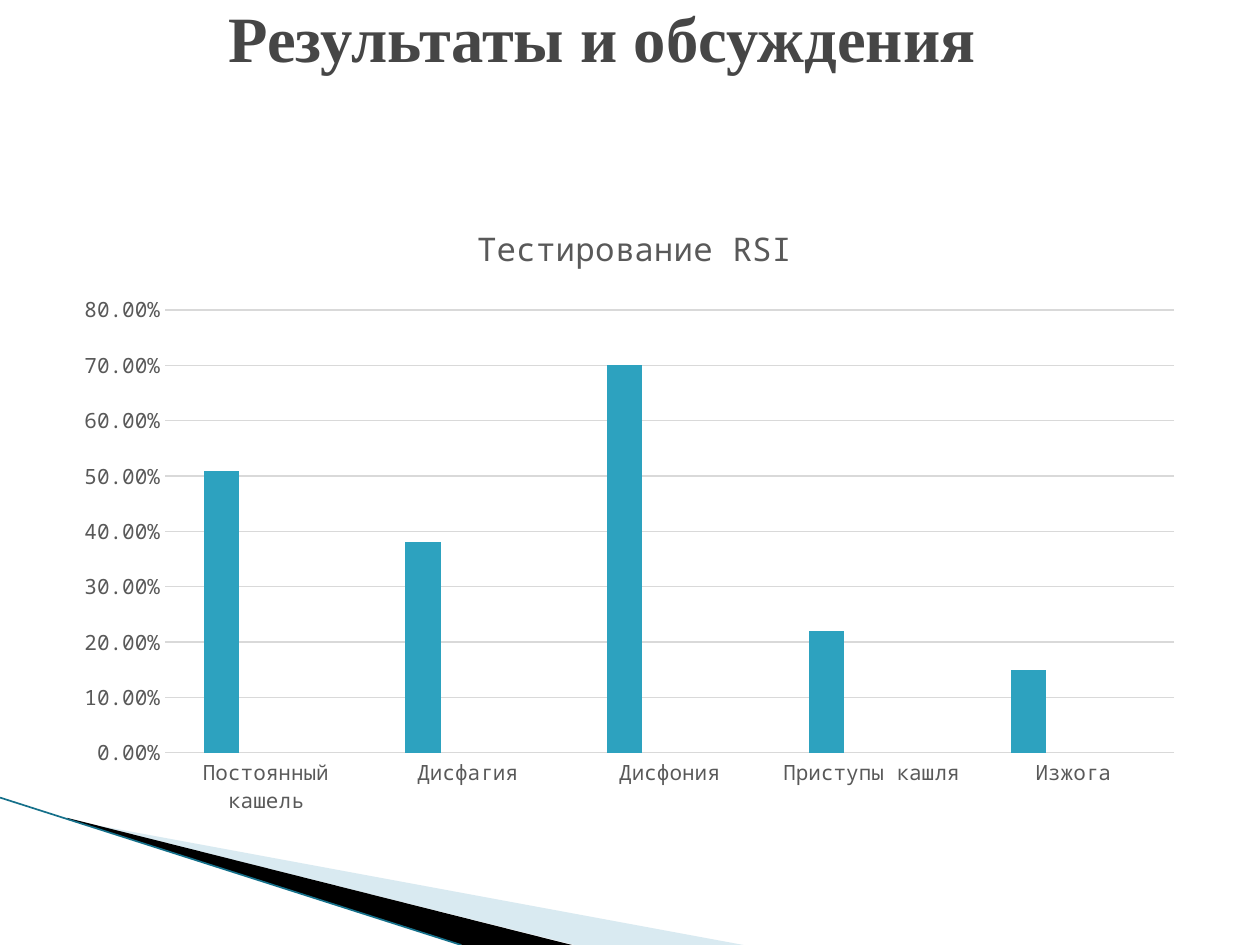
from dataclasses import dataclass

import pptx
import pptx.chart.data
import pptx.dml.color
import pptx.enum.chart
import pptx.enum.shapes
import pptx.enum.text
import pptx.oxml
import pptx.oxml.ns
import pptx.util
from pptx.util import Inches


@dataclass(frozen=True)
class Theme:
    title_font: str = "Times New Roman"
    chart_font: str = "Noto Sans Mono"
    title_size: float = 36.9
    chart_title_size: float = 18.6
    chart_size: float = 10
    axis_size: float = 12
    title_color: str = "464646"
    chart_text: str = "595959"
    grid: str = "D9D9D9"
    pale_wedge: str = "A0CBDC"
    dark_wedge: str = "000000"
    edge: str = "15708A"
    series: tuple = ("2DA2BF", "DA1F28", "EB641B")


def rgb(color):
    return pptx.dml.color.RGBColor.from_string(color)


def set_font(font, name, size, color, bold=False):
    font.name = name
    font.size = pptx.util.Pt(size)
    font.bold = bold
    font.color.rgb = rgb(color)


def set_line(line, color, width):
    line.color.rgb = rgb(color)
    line.width = pptx.util.Pt(width)


def set_layout(parent, index, target=None, **fractions):
    """Place a chart part by fractions of the chart area."""
    old = parent.find(pptx.oxml.ns.qn("c:layout"))
    if old is not None:
        parent.remove(old)
    inner = f'<c:layoutTarget val="{target}"/>' if target else ""
    inner += '<c:xMode val="edge"/><c:yMode val="edge"/>'
    inner += "".join(f'<c:{key} val="{value}"/>' for key, value in fractions.items())
    parent.insert(index, pptx.oxml.parse_xml(
        f'<c:layout {pptx.oxml.ns.nsdecls("c")}><c:manualLayout>{inner}'
        "</c:manualLayout></c:layout>"))


class SlideBuilder:
    def __init__(self, slide, theme):
        self.slide = slide
        self.theme = theme

    def title(self, text, left, top, width, height):
        box = self.slide.shapes.title
        box.left, box.top = Inches(left), Inches(top)
        box.width, box.height = Inches(width), Inches(height)
        frame = box.text_frame
        frame.text = text
        frame.margin_top = frame.margin_bottom = 0
        frame.vertical_anchor = pptx.enum.text.MSO_ANCHOR.MIDDLE
        para = frame.paragraphs[0]
        para.alignment = pptx.enum.text.PP_ALIGN.CENTER
        set_font(para.font, self.theme.title_font, self.theme.title_size,
                 self.theme.title_color, bold=True)

    def wedge(self, points, color, opacity=100):
        start, *rest = [(Inches(x), Inches(y)) for x, y in points]
        builder = self.slide.shapes.build_freeform(*start)
        builder.add_line_segments(rest, close=True)
        shape = builder.convert_to_shape()
        shape.shadow.inherit = False
        shape.line.fill.background()
        shape.fill.solid()
        shape.fill.fore_color.rgb = rgb(color)
        if opacity < 100:
            color_node = next(shape.element.spPr.iter(pptx.oxml.ns.qn("a:srgbClr")))
            color_node.append(pptx.oxml.parse_xml(
                f'<a:alpha {pptx.oxml.ns.nsdecls("a")} val="{opacity * 1000}"/>'))

    def line(self, start, end, color, width):
        connector = self.slide.shapes.add_connector(
            pptx.enum.shapes.MSO_CONNECTOR.STRAIGHT, *map(Inches, start + end))
        set_line(connector.line, color, width)
        connector.element.spPr.append(pptx.oxml.parse_xml(
            f'<a:effectLst {pptx.oxml.ns.nsdecls("a")}/>'))

    def column_chart(self, title, categories, series, left, top, width, height):
        theme = self.theme
        data = pptx.chart.data.CategoryChartData(number_format="0.00%")
        data.categories = categories
        for name, values in series.items():
            data.add_series(name, values)
        chart = self.slide.shapes.add_chart(
            pptx.enum.chart.XL_CHART_TYPE.COLUMN_CLUSTERED,
            *map(Inches, (left, top, width, height)), data).chart
        set_font(chart.font, theme.chart_font, theme.chart_size, theme.chart_text)
        chart.has_legend = False

        chart.has_title = True
        chart.chart_title.text_frame.text = title
        set_font(chart.chart_title.text_frame.paragraphs[0].font,
                 theme.chart_font, theme.chart_title_size, theme.chart_text)
        chart.chart_title.include_in_layout = False

        plot = chart.plots[0]
        plot.gap_width, plot.overlap = 219, -27
        plot.vary_by_categories = False
        for bars, color in zip(plot.series, theme.series):
            bars.format.fill.solid()
            bars.format.fill.fore_color.rgb = rgb(color)

        for axis in (chart.category_axis, chart.value_axis):
            axis.major_tick_mark = pptx.enum.chart.XL_TICK_MARK.NONE
            axis.minor_tick_mark = pptx.enum.chart.XL_TICK_MARK.NONE
            set_font(axis.tick_labels.font, theme.chart_font,
                     theme.axis_size, theme.chart_text)
        set_line(chart.category_axis.format.line, theme.grid, 0.75)
        values_axis = chart.value_axis
        values_axis.format.line.fill.background()
        values_axis.minimum_scale, values_axis.maximum_scale = 0, 0.8
        values_axis.major_unit = 0.1
        values_axis.tick_labels.number_format = "0.00%"
        values_axis.tick_labels.number_format_is_linked = False
        set_line(values_axis.major_gridlines.format.line, theme.grid, 0.75)

        qn = pptx.oxml.ns.qn
        set_layout(next(chart.element.iter(qn("c:title"))), 1, x=0.36, y=0.02)
        set_layout(next(chart.element.iter(qn("c:plotArea"))), 0, target="inner",
                   x=0.09, y=0.17, w=0.89, h=0.71)


def main():
    deck = pptx.Presentation()
    deck.slide_width, deck.slide_height = Inches(10), Inches(7.5)
    theme = Theme()
    page = SlideBuilder(deck.slides.add_slide(deck.slide_layouts[5]), theme)

    page.wedge([(0.55, 6.51), (5.9, 7.5), (4.56, 7.5), (0.55, 6.5)],
               theme.pale_wedge, opacity=40)
    page.wedge([(0.53, 6.49), (4.54, 7.5), (3.67, 7.5), (0.54, 6.5)],
               theme.dark_wedge)
    page.line((0, 6.33), (3.66, 7.5), theme.edge, 0.95)
    page.title("Результаты и обсуждения", 0.45, 0, 8.66, 0.58)

    categories = ["Постоянный кашель", "Дисфагия", "Дисфония",
                  "Приступы кашля", "Изжога"]
    no_values = [None] * len(categories)
    page.column_chart(
        "Тестирование RSI", categories,
        {"Series 1": [0.51, 0.38, 0.7, 0.22, 0.15],
         "Series 2": no_values, "Series 3": no_values},
        0.5, 1.62, 9, 4.95)
    deck.save("out.pptx")


if __name__ == "__main__":
    main()
